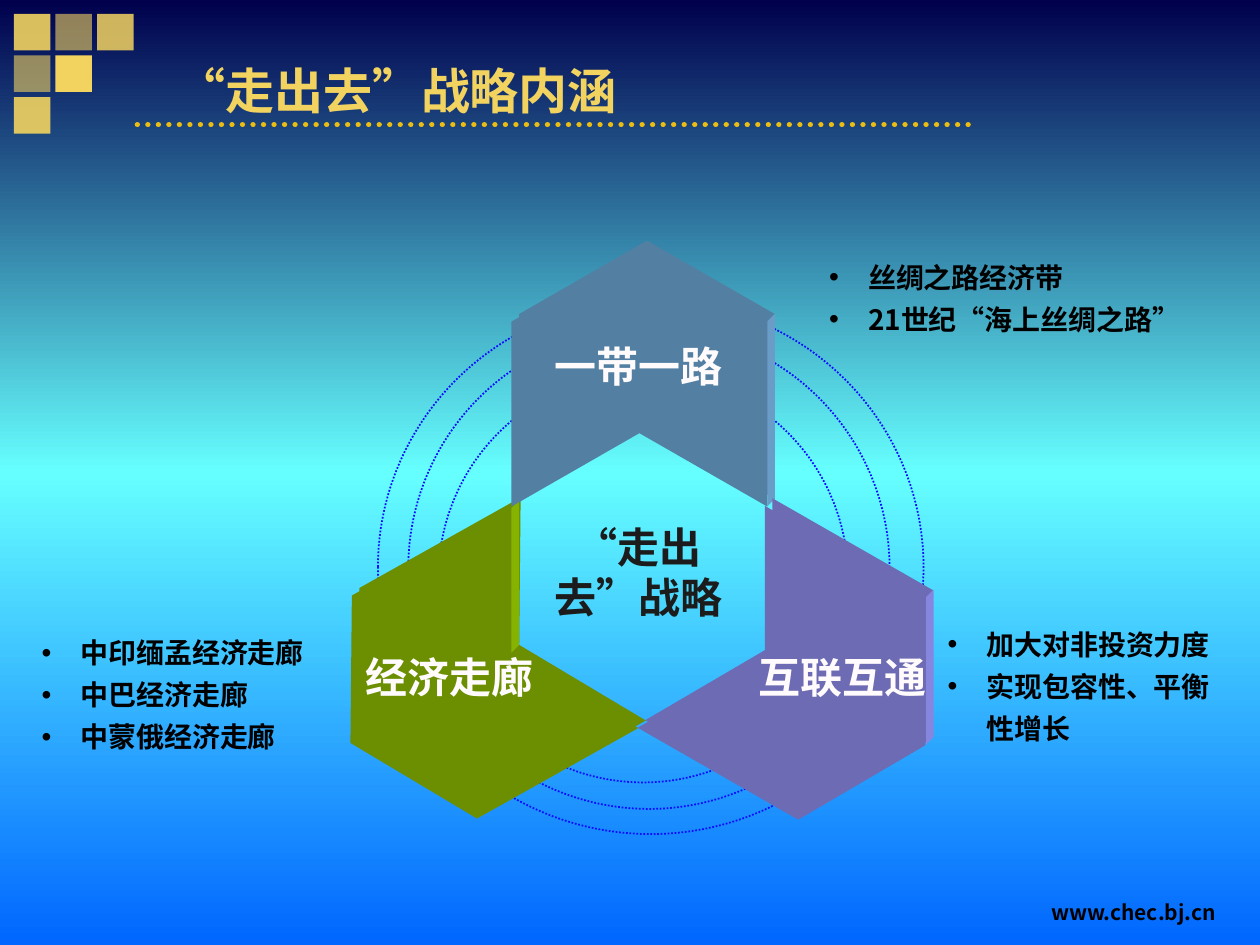
from copy import deepcopy
from dataclasses import dataclass
from lxml.etree import SubElement
from pptx import Presentation
from pptx.dml.color import RGBColor
from pptx.enum.dml import MSO_LINE
from pptx.enum.lang import MSO_LANGUAGE_ID
from pptx.enum.shapes import MSO_CONNECTOR, MSO_SHAPE
from pptx.enum.text import MSO_ANCHOR, MSO_AUTO_SIZE, PP_ALIGN
from pptx.oxml.ns import qn
from pptx.util import Inches, Pt


@dataclass(frozen=True)
class Theme:
    """Colours, type sizes and font of the slide."""
    font: str = "Noto Sans CJK SC"
    gold: str = "F2D360"
    rule: str = "EABD13"
    ring: str = "0A0AFF"
    black: str = "000000"
    dark: str = "1C1C1C"
    white: str = "FFFBFC"
    blue: tuple = ("537FA3", "6A9CC8")
    green: tuple = ("6B8F00", "86B300")
    violet: tuple = ("6C6BB3", "8686E0")
    sky: tuple = ((0, "00004D"), (50, "66FFFF"), (100, "0066FF"))
    head: int = 28
    label: int = 24
    body: int = 16
    foot: int = 12


def put(frame, text, size, color, font, align=PP_ALIGN.LEFT,
        anchor=MSO_ANCHOR.TOP, bullet=False):
    """Fill a text frame, one paragraph per line of text."""
    frame.word_wrap = True
    frame.auto_size = MSO_AUTO_SIZE.NONE
    frame.vertical_anchor = anchor
    frame.text = text
    for para in frame.paragraphs:
        para.alignment = align
        para.space_before = Pt(0)
        if bullet:
            para.line_spacing = Pt(24)
            props = para._p.get_or_add_pPr()
            props.set("marL", str(Inches(0.31)))
            props.set("indent", str(-Inches(0.31)))
            SubElement(props, qn("a:buFont"), typeface="Arial")
            SubElement(props, qn("a:buChar"), char="•")
        for run in para.runs:
            face = run.font
            face.size, face.bold, face.name = Pt(size), True, font
            face.color.rgb = RGBColor.from_string(color)
            face.language_id = MSO_LANGUAGE_ID.SIMPLIFIED_CHINESE
            SubElement(run._r.rPr, qn("a:ea"), typeface=font)


class Page:
    """Draws themed elements on a grid of 100 columns by 75 rows."""

    def __init__(self, deck, theme):
        """Add a slide and take its placeholders."""
        self.theme = theme
        self.col = deck.slide_width / 100
        self.row = deck.slide_height / 75
        self.slide = deck.slides.add_slide(deck.slide_layouts[4])
        self.shapes = self.slide.shapes
        self.holders = list(self.slide.placeholders)[1:]

    def spot(self, *grid):
        """Turn column and row pairs into slide lengths."""
        return [round(v * (self.row if i % 2 else self.col))
                for i, v in enumerate(grid)]

    def sky(self):
        """Paint the background gradient."""
        fill = self.slide.background.fill
        fill.gradient()
        fill.gradient_angle = 270
        stops = self.slide.element.find(".//" + qn("a:gsLst"))
        stops.insert(1, deepcopy(stops[0]))
        for stop, (pos, color) in zip(fill.gradient_stops, self.theme.sky):
            stop.position = pos / 100
            stop.color.rgb = RGBColor.from_string(color)

    def paint(self, shape, color, alpha=100):
        """Give a shape a flat fill without line or shadow."""
        shape.shadow.inherit = False
        shape.line.fill.background()
        shape.fill.solid()
        shape.fill.fore_color.rgb = RGBColor.from_string(color)
        if alpha < 100:
            tone = shape.fill._xPr.find(".//" + qn("a:srgbClr"))
            SubElement(tone, qn("a:alpha"), val=str(alpha * 1000))

    def tile(self, col, row, alpha):
        """Draw one square of the corner mosaic."""
        box = self.spot(1.1 + 3.3 * col, 1.1 + 3.3 * row, 2.9, 2.9)
        shape = self.shapes.add_shape(MSO_SHAPE.RECTANGLE, *box)
        self.paint(shape, self.theme.gold, alpha)

    def dots(self, line, color, width):
        """Make a line dotted."""
        line.color.rgb = RGBColor.from_string(color)
        line.width = Pt(width)
        line.dash_style = MSO_LINE.ROUND_DOT

    def rule(self, *ends):
        """Draw the dotted rule under the title."""
        link = self.shapes.add_connector(MSO_CONNECTOR.STRAIGHT, *self.spot(*ends))
        self.dots(link.line, self.theme.rule, 3)
        link.line._ln.set("cap", "rnd")
        SubElement(link._element.spPr, qn("a:effectLst"))

    def ring(self, *box):
        """Draw a dotted ellipse."""
        shape = self.shapes.add_shape(MSO_SHAPE.OVAL, *self.spot(*box))
        shape.shadow.inherit = False
        shape.fill.background()
        self.dots(shape.line, self.theme.ring, 1)

    def block(self, left, top, turn, tones, edge, depth=0.6):
        """Draw a chevron with depth and a lit upright edge."""
        face, lit = tones
        for shift in (depth, 0):
            box = self.spot(left + shift, top - shift, 20.5, 20.3)
            shape = self.shapes.add_shape(MSO_SHAPE.CHEVRON, *box)
            shape.rotation = turn
            shape.adjustments[0] = 0.287
            self.paint(shape, face)
        x, y, tall = edge
        points = [(x, y), (x + depth, y - depth),
                  (x + depth, y + tall - depth), (x, y + tall)]
        first, *rest = [tuple(self.spot(*point)) for point in points]
        build = self.shapes.build_freeform(*first)
        build.add_line_segments(rest)
        self.paint(build.convert_to_shape(), lit)

    def text(self, words, *box, **style):
        """Add a text box."""
        shape = self.shapes.add_textbox(*self.spot(*box))
        put(shape.text_frame, words, font=self.theme.font, **style)

    def hold(self, shape, words, *box, **style):
        """Move and fill a placeholder."""
        shape.left, shape.top, shape.width, shape.height = self.spot(*box)
        put(shape.text_frame, words, font=self.theme.font, **style)

    def title(self, words, *box):
        """Set the title."""
        self.hold(self.shapes.title, words, *box, size=self.theme.head,
                  color=self.theme.gold, anchor=MSO_ANCHOR.MIDDLE)

    def items(self, words, *box):
        """Set a bullet list in the next body placeholder."""
        self.hold(self.holders.pop(0), words, *box, size=self.theme.body,
                  color=self.theme.black, bullet=True)

    def trim(self):
        """Remove the placeholders left empty."""
        for shape in self.holders:
            shape._element.getparent().remove(shape._element)


def main():
    """Build the slide and save it."""
    deck = Presentation()
    deck.slide_width, deck.slide_height = Inches(10), Inches(7.5)
    theme = Theme()
    page = Page(deck, theme)
    page.sky()
    for tile in ((0, 0, 90), (1, 0, 60), (2, 0, 85),
                 (1, 1, 100), (0, 1, 60), (0, 2, 90)):
        page.tile(*tile)
    page.title("“走出去”战略内涵", 13, 3.4, 56.6, 7.5)
    page.rule(10.9, 9.9, 77.3, 9.9)
    page.text("www.chec.bj.cn", 74.2, 70.9, 23.3, 2.5, size=theme.foot,
              color=theme.black, align=PP_ALIGN.RIGHT)
    for ring in ((30, 23.8, 43.3, 42.4), (32.4, 26, 38.2, 38.2),
                 (34.8, 29.6, 32.5, 32.5)):
        page.ring(*ring)
    page.block(26.5, 43.8, 150.7, theme.green, (40.6, 40.3, 11.5))
    page.block(40.5, 19.8, 270, theme.blue, (60.9, 25.5, 14.7))
    page.block(54.3, 43.9, 29.8, theme.violet, (73.5, 47.4, 11.7))
    for words, color, *box in (
            ("“走出去”战略", theme.dark, 40.5, 40.9, 20.3, 9.1),
            ("一带一路", theme.white, 39.5, 26.5, 22.3, 5),
            ("经济走廊", theme.white, 27.6, 51.2, 16.1, 5),
            ("互联互通", theme.white, 58.7, 51.2, 16.3, 5)):
        page.text(words, *box, size=theme.label, color=color,
                  align=PP_ALIGN.CENTER)
    page.items("丝绸之路经济带\n21世纪“海上丝绸之路”", 64.8, 19.5, 32.4, 7.4)
    page.items("中印缅孟经济走廊\n中巴经济走廊\n中蒙俄经济走廊",
               2.3, 49.3, 24.2, 11.1)
    page.items("加大对非投资力度\n实现包容性、平衡性增长",
               74.2, 48.6, 23.9, 10.8)
    page.trim()
    deck.save("out.pptx")


if __name__ == "__main__":
    main()
